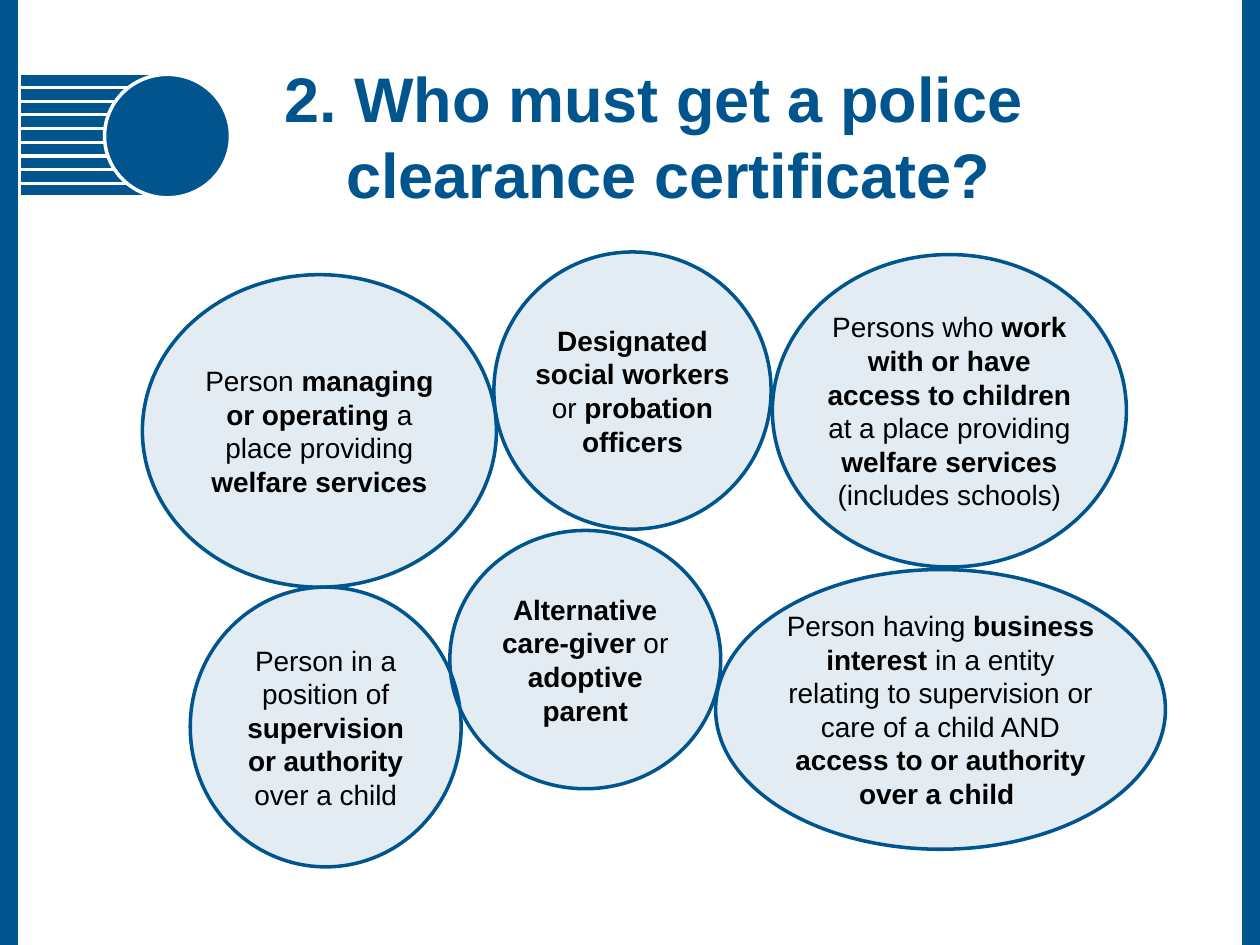
from pptx import Presentation
from pptx.dml.color import RGBColor
from pptx.enum.shapes import MSO_CONNECTOR, MSO_SHAPE
from pptx.enum.text import MSO_ANCHOR, PP_ALIGN
from pptx.oxml.ns import qn
from pptx.util import Inches, Pt
from lxml import etree

BLUE = RGBColor(0x00, 0x55, 0x8F)
WHITE = RGBColor(0xFF, 0xFF, 0xFF)
BLACK = RGBColor(0x00, 0x00, 0x00)

presentation = Presentation()
presentation.slide_width = Inches(10)
presentation.slide_height = Inches(7.5)
slide = presentation.slides.add_slide(presentation.slide_layouts[6])


def add_bar(x1, y1, x2, y2, weight):
    line = slide.shapes.add_connector(
        MSO_CONNECTOR.STRAIGHT, Inches(x1), Inches(y1), Inches(x2), Inches(y2))
    line.line.color.rgb = BLUE
    line.line.width = Pt(weight)
    etree.SubElement(line._element.spPr, qn("a:effectLst"))


def add_ellipse(left, top, width, height, line_color):
    shape = slide.shapes.add_shape(
        MSO_SHAPE.OVAL, Inches(left), Inches(top), Inches(width), Inches(height))
    shape.shadow.inherit = False
    shape.fill.solid()
    shape.fill.fore_color.rgb = BLUE
    shape.line.color.rgb = line_color
    shape.line.width = Pt(2)
    return shape


# Side borders
for x in (0.07, 9.93):
    add_bar(x, 0, x, 7.5, 10)

# Striped emblem with a disc
for index in range(9):
    y = 0.64 + index * 0.87 / 8
    add_bar(0.17, y, 1.29, y, 6)
add_ellipse(0.83, 0.59, 1, 0.98, WHITE)

# Title with a hanging indent
title = slide.shapes.add_textbox(Inches(2.16), Inches(0.45), Inches(7.95), Inches(1.25))
text_frame = title.text_frame
text_frame.word_wrap = True
text_frame.vertical_anchor = MSO_ANCHOR.MIDDLE
text_frame.text = "2. Who must get a police \vclearance certificate?"
paragraph = text_frame.paragraphs[0]
properties = paragraph._p.get_or_add_pPr()
properties.set("marL", str(Inches(0.49)))
properties.set("indent", str(Inches(-0.49)))
for run in paragraph.runs:
    run.font.name = "Arial"
    run.font.size = Pt(36)
    run.font.bold = True
    run.font.color.rgb = BLUE

# Bubbles: position and size, then text with ** around the bold parts
bubbles = [
    ((3.57, 4.21, 2.15, 2.05),
     "**Alternative care-giver **or **adoptive parent**"),
    ((6.13, 2.02, 2.81, 2.48),
     "Persons who **work with or have access to children** at a place providing "
     "**welfare services **(includes schools)"),
    ((1.51, 4.66, 2.15, 2.22),
     "Person in a position of **supervision or authority **over a child"),
    ((5.68, 4.52, 3.57, 2.22),
     "Person having **business interest **in a entity relating to supervision "
     "or care of a child AND **access to or authority over a child **"),
    ((3.92, 2, 2.2, 2.2),
     "**Designated social workers **or **probation officers**"),
    ((1.13, 2.18, 2.81, 2.48),
     "Person **managing or operating **a place providing **welfare services**"),
]
for box, text in bubbles:
    bubble = add_ellipse(*box, BLUE)
    color = bubble._element.spPr.find(qn("a:solidFill")).find(qn("a:srgbClr"))
    etree.SubElement(color, qn("a:alpha")).set("val", "11000")

    text_frame = bubble.text_frame
    text_frame.word_wrap = True
    text_frame.vertical_anchor = MSO_ANCHOR.MIDDLE
    text_frame.margin_left = text_frame.margin_right = 0
    text_frame.margin_top = text_frame.margin_bottom = 0
    paragraph = text_frame.paragraphs[0]
    paragraph.alignment = PP_ALIGN.CENTER
    for index, part in enumerate(text.split("**")):
        if part:
            run = paragraph.add_run()
            run.text = part
            run.font.name = "Arial"
            run.font.size = Pt(16)
            run.font.bold = index % 2 == 1
            run.font.color.rgb = BLACK

presentation.save("out.pptx")
